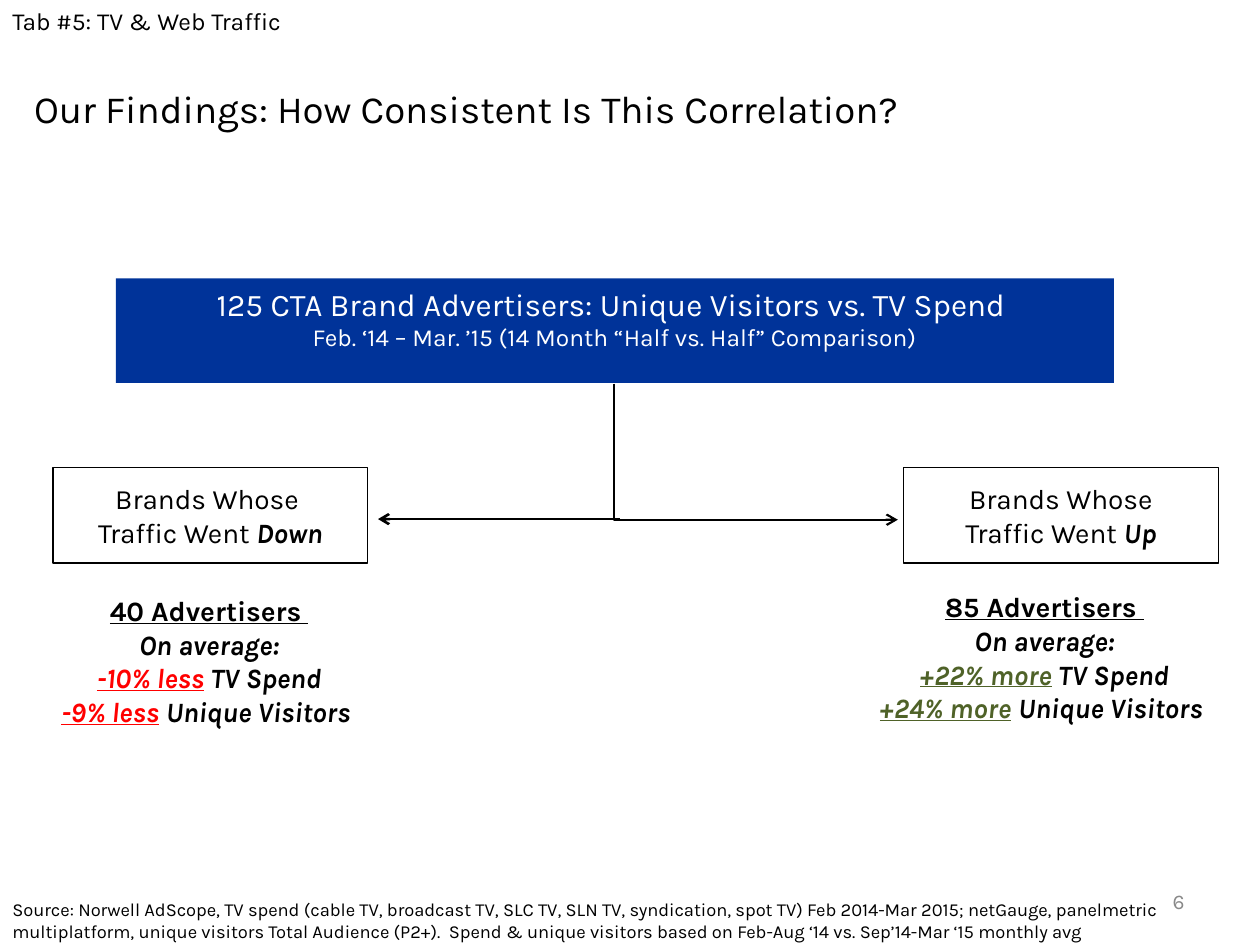
from lxml.etree import SubElement
from pptx import Presentation
from pptx.dml.color import RGBColor
from pptx.enum.shapes import MSO_CONNECTOR, MSO_SHAPE
from pptx.enum.text import MSO_ANCHOR, MSO_AUTO_SIZE, PP_ALIGN
from pptx.oxml.ns import qn
from pptx.util import Inches, Pt

BLACK = RGBColor(0x00, 0x00, 0x00)
WHITE = RGBColor(0xFF, 0xFF, 0xFF)
BLUE = RGBColor(0x00, 0x33, 0x99)
RED = RGBColor(0xFF, 0x00, 0x00)
GREEN = RGBColor(0x4F, 0x62, 0x28)
GRAY = RGBColor(0x89, 0x89, 0x89)

FONT = "Karla"
EMPHASIS = {"bold": True, "italic": True}
HEADING = {"bold": True, "underline": True}
BOX_TOP = 3.71
BOX_WIDTH, BOX_HEIGHT = 2.5, 0.76
SOURCE = (
    "Source: Norwell AdScope, TV spend (cable TV, broadcast TV, SLC TV, SLN TV, "
    "syndication, spot TV) Feb 2014-Mar 2015; netGauge, panelmetric multiplatform, "
    "unique visitors Total Audience (P2+).  Spend & unique visitors based on "
    "Feb-Aug ‘14 vs. Sep’14-Mar ‘15 monthly avg"
)


def add_run(paragraph, text, size, color=BLACK, **formats):
    run = paragraph.add_run()
    run.text = text
    values = {"name": FONT, "size": Pt(size), **formats}
    for name, value in values.items():
        setattr(run.font, name, value)
    run.font.color.rgb = color


def write_lines(shape, lines, size, color=BLACK, alignment=PP_ALIGN.CENTER,
                anchor=MSO_ANCHOR.MIDDLE):
    frame = shape.text_frame
    values = {"word_wrap": True, "auto_size": MSO_AUTO_SIZE.NONE,
              "vertical_anchor": anchor}
    for name, value in values.items():
        setattr(frame, name, value)
    for index, runs in enumerate(lines):
        paragraph = frame.add_paragraph() if index else frame.paragraphs[0]
        paragraph.alignment = alignment
        for text, formats in runs:
            add_run(paragraph, text, **{"size": size, "color": color, **formats})


def add_title(slide, text):
    title = slide.shapes.title
    values = {"left": 0.17, "top": 0.38, "width": 9.5, "height": 0.95}
    for name, value in values.items():
        setattr(title, name, Inches(value))
    write_lines(title, [[(text, {})]], 22, alignment=PP_ALIGN.LEFT)


def add_text(slide, position, lines, size, **formats):
    box = slide.shapes.add_textbox(*map(Inches, position))
    write_lines(box, lines, size, **formats)


def add_box(slide, position, fill, line=None):
    shape = slide.shapes.add_shape(MSO_SHAPE.RECTANGLE, *map(Inches, position))
    shape.shadow.inherit = False
    shape.fill.solid()
    shape.fill.fore_color.rgb = fill
    if line is None:
        shape.line.fill.background()
    else:
        shape.line.color.rgb = line
        shape.line.width = Pt(0.75)
    return shape


def add_arrow(slide, kind, points, width):
    connector = slide.shapes.add_connector(kind, *map(Inches, points))
    connector.line.color.rgb = BLACK
    connector.line.width = Pt(width)
    properties = connector._element.spPr
    SubElement(properties.find(qn("a:ln")), qn("a:tailEnd"), type="arrow")
    SubElement(properties, qn("a:effectLst"))
    return connector


def add_bent_arrow(slide):
    connector = add_arrow(slide, MSO_CONNECTOR.ELBOW, (6.54, 2.46, 5.46, 4.71), 1.25)
    properties = connector._element.spPr
    properties.find(qn("a:xfrm")).set("rot", "16200000")
    properties.find(qn("a:prstGeom")).set("prst", "bentConnector2")


def add_traffic_box(slide, left, direction):
    box = add_box(slide, (left, BOX_TOP, BOX_WIDTH, BOX_HEIGHT), WHITE, BLACK)
    first = "Brands Whose " if direction == "Down" else "Brands Whose"
    write_lines(box, [[(first, {})],
                      [("Traffic Went ", {}), (direction, EMPHASIS)]], 16)


def add_results(slide, left, top, count, spend, visitors, color):
    change = {**EMPHASIS, "underline": True, "color": color}
    lines = [
        [(f"{count} Advertisers ", HEADING)],
        [("On average:", EMPHASIS)],
        [(spend, change), (" TV Spend", EMPHASIS)],
        [(visitors, change), (" ", {}), ("Unique Visitors ", EMPHASIS)],
    ]
    add_text(slide, (left, top, 3.08, 1.17), lines, 16)


def main():
    presentation = Presentation()
    presentation.slide_width = Inches(10)
    presentation.slide_height = Inches(7.5)
    slide = presentation.slides.add_slide(presentation.slide_layouts[5])

    add_title(slide, "Our Findings: How Consistent Is This Correlation?")
    banner = add_box(slide, (0.92, 2.21, 7.92, 0.83), BLUE)
    write_lines(banner, [
        [("125 CTA Brand Advertisers: Unique Visitors vs. TV Spend ", {})],
        [("Feb. ‘14 – Mar. ’15 (14 Month “Half vs. Half” Comparison)", {"size": 14})],
    ], 18, WHITE, anchor=MSO_ANCHOR.TOP)

    add_traffic_box(slide, 7.17, "Up")
    add_bent_arrow(slide)
    add_arrow(slide, MSO_CONNECTOR.STRAIGHT, (4.92, 4.12, 3, 4.12), 1.5)
    add_traffic_box(slide, 0.42, "Down")
    add_results(slide, 0.12, 4.66, 40, "-10% less", "-9% less", RED)
    add_results(slide, 6.75, 4.63, 85, "+22% more", "+24% more", GREEN)

    add_text(slide, (7.17, 6.95, 2.33, 0.4), [[("6", {})]], 12,
             color=GRAY, alignment=PP_ALIGN.RIGHT)
    add_text(slide, (0, 7.08, 9.83, 0.45), [[(SOURCE, {})]], 10.5,
             alignment=PP_ALIGN.LEFT, anchor=MSO_ANCHOR.TOP)
    add_text(slide, (0, 0, 2.58, 0.34), [[("Tab #5: TV & Web Traffic", {})]], 14,
             alignment=PP_ALIGN.LEFT, anchor=MSO_ANCHOR.TOP)
    presentation.save("out.pptx")


if __name__ == "__main__":
    main()
